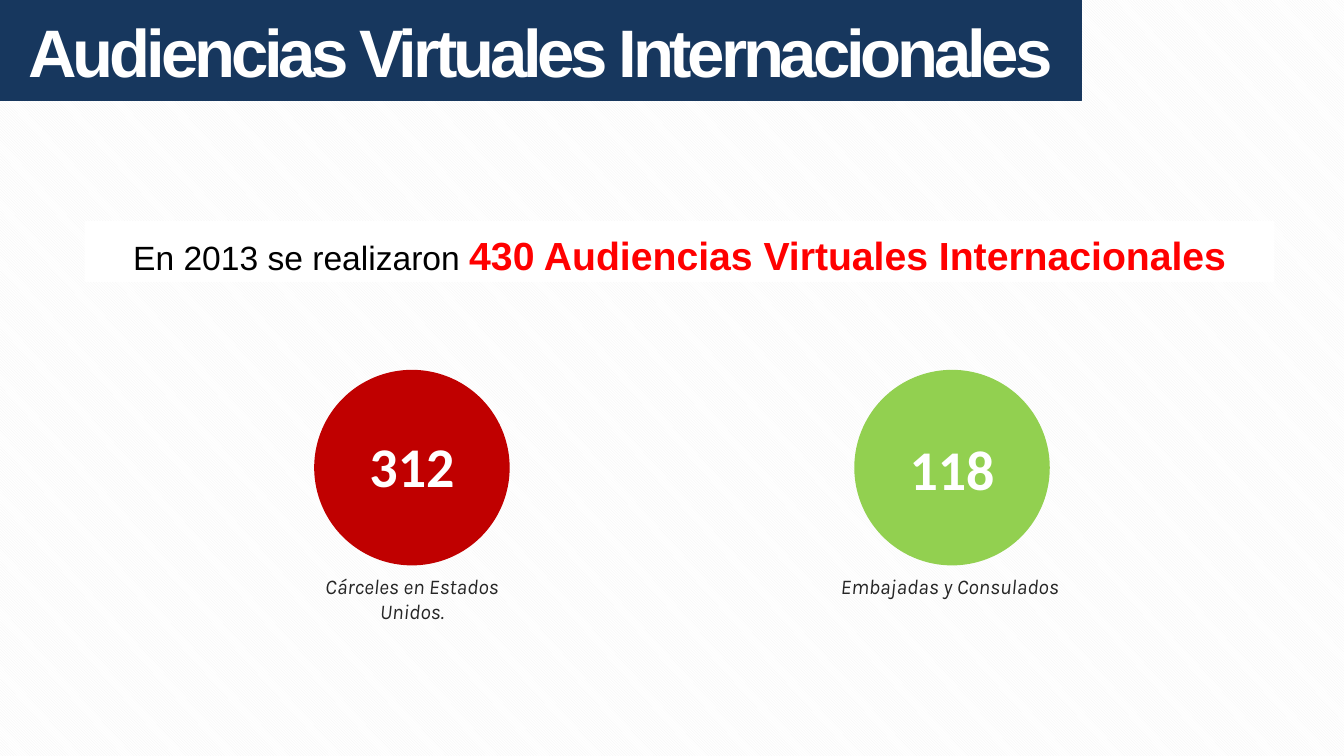
import pptx
import pptx.util
import pptx.dml.color
import pptx.enum.dml
import pptx.enum.shapes
import pptx.enum.text

Pt = pptx.util.Pt
RGB = pptx.dml.color.RGBColor.from_string
SHAPE = pptx.enum.shapes.MSO_SHAPE

COLORS = {"navy": "17375E", "white": "FFFFFF", "stripe": "F2F2F2", "black": "000000",
          "bright": "FF0000", "red": "C00000", "green": "92D050", "gray": "262626"}
TITLE = "Audiencias Virtuales Internacionales"
SUMMARY = [("En 2013 se realizaron ", {"size": 24, "color": "black"}),
           ("430 Audiencias Virtuales Internacionales",
            {"size": 28, "color": "bright", "bold": True})]
FIGURES = [
    {"value": "118", "label": "Embajadas y Consulados ", "color": "green",
     "center": 680.4, "value_top": 306.7, "label_height": 25},
    {"value": "312", "label": "Cárceles en Estados Unidos.", "color": "red",
     "center": 294.4, "value_top": 304.6, "label_height": 44},
]
CIRCLE, CIRCLE_TOP = 139.7, 264.2
VALUE_W, VALUE_H = 75.6, 55.4
LABEL_W, LABEL_TOP = 185, 406.1


def add_shape(s, kind, color, x, y, w, h):
    sp = s.shapes.add_shape(kind, Pt(x), Pt(y), Pt(w), Pt(h))
    sp.shadow.inherit = False
    sp.fill.solid()
    sp.fill.fore_color.rgb = RGB(COLORS[color])
    sp.line.fill.background()
    return sp


def add_text(p, text, size=15, color="white", font="Arial", bold=False, italic=False,
             spacing=None):
    p.alignment = pptx.enum.text.PP_ALIGN.CENTER
    r = p.add_run()
    r.text = text
    r.font.name = font
    r.font.size = Pt(size)
    r.font.bold = bold
    r.font.italic = italic
    r.font.color.rgb = RGB(COLORS[color])
    if spacing is not None:
        r.font._element.set("spc", str(spacing * 100))


def add_box(s, text, x, y, w, h, wrap=True, **fmt):
    tf = s.shapes.add_textbox(Pt(x), Pt(y), Pt(w), Pt(h)).text_frame
    tf.word_wrap = wrap
    add_text(tf.paragraphs[0], text, **fmt)


def main():
    """Build the slide on international virtual hearings."""
    prs = pptx.Presentation()
    prs.slide_width, prs.slide_height = Pt(960.48), Pt(540)
    s = prs.slides.add_slide(prs.slide_layouts[6])
    fill = s.background.fill
    fill.patterned()
    fill.pattern = pptx.enum.dml.MSO_PATTERN.LIGHT_DOWNWARD_DIAGONAL
    fill.fore_color.rgb = RGB(COLORS["stripe"])
    fill.back_color.rgb = RGB(COLORS["white"])

    banner = add_shape(s, SHAPE.RECTANGLE, "white", 60.5, 157.7, 850.3, 43.9)
    p = banner.text_frame.paragraphs[0]
    p.line_spacing = 1.15
    for text, fmt in SUMMARY:
        add_text(p, text, **fmt)

    for fig in FIGURES:
        cx = fig["center"]
        add_shape(s, SHAPE.OVAL, fig["color"], cx - CIRCLE / 2, CIRCLE_TOP, CIRCLE, CIRCLE)
        add_box(s, fig["value"], cx - VALUE_W / 2, fig["value_top"], VALUE_W, VALUE_H,
                wrap=False, size=40, font="Calibri", bold=True)
        add_box(s, fig["label"], cx - LABEL_W / 2, LABEL_TOP, LABEL_W, fig["label_height"],
                color="gray", font="Karla", italic=True)

    title = add_shape(s, SHAPE.RECTANGLE, "navy", 0, 0, 772.6, 72)
    title.line.color.rgb = RGB(COLORS["navy"])
    title.line.width = Pt(0.75)
    add_text(title.text_frame.paragraphs[0], TITLE, size=48, bold=True, spacing=-3)
    prs.save("out.pptx")


if __name__ == "__main__":
    main()
